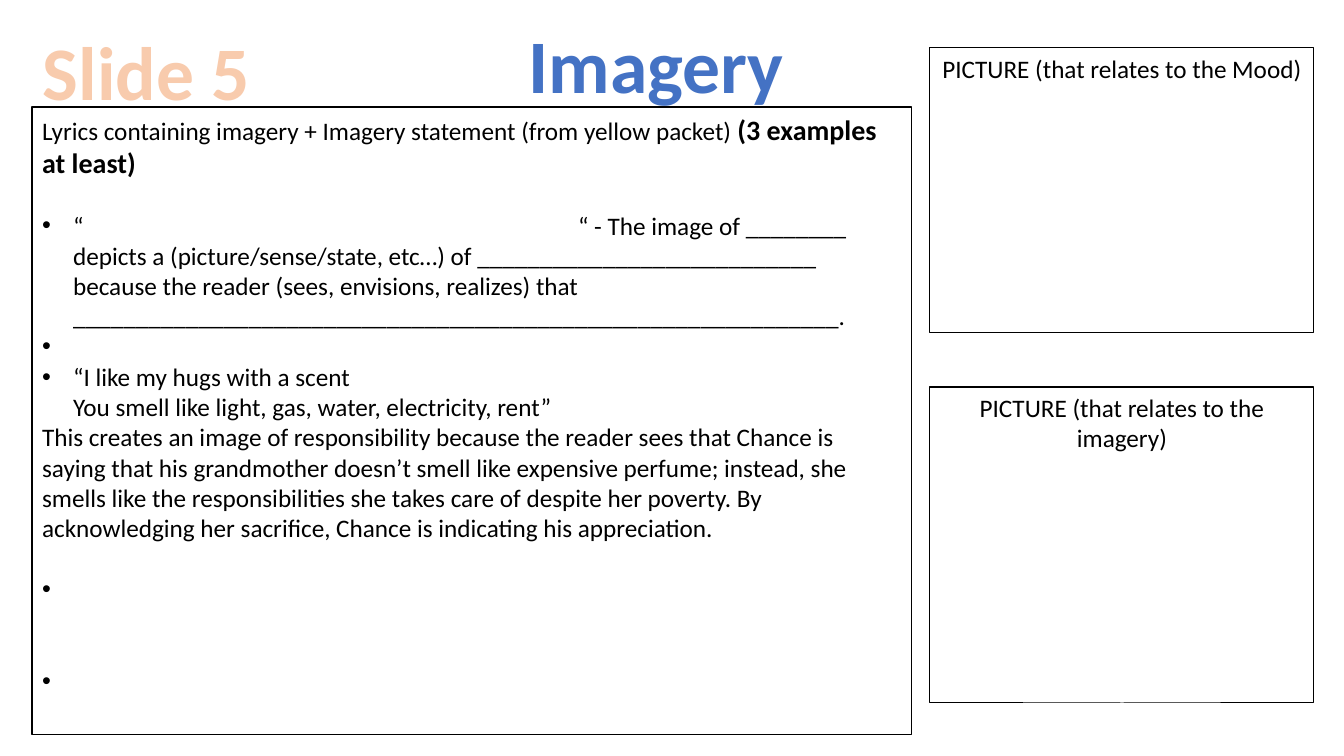
from lxml import etree
from pptx import Presentation
from pptx.dml.color import RGBColor
from pptx.enum.shapes import MSO_SHAPE
from pptx.enum.text import MSO_ANCHOR, MSO_AUTO_SIZE, PP_ALIGN
from pptx.oxml.ns import qn
from pptx.util import Pt

RECT = MSO_SHAPE.RECTANGLE
TOP = MSO_ANCHOR.TOP
FIXED = MSO_AUTO_SIZE.NONE
LEFT, CENTER = PP_ALIGN.LEFT, PP_ALIGN.CENTER

BLACK = RGBColor(0x00, 0x00, 0x00)
WHITE = RGBColor(0xFF, 0xFF, 0xFF)
PEACH = RGBColor(0xF8, 0xCB, 0xAD)
ORANGE = RGBColor(0xED, 0x7D, 0x31)
BLUE = RGBColor(0x44, 0x72, 0xC4)

SCALE = 914400 / 100.8
LINE = 22  # height in points of one line of 18 pt text
INDENT = 31
TAB = 536

PLAIN = {"name": "Calibri", "size": Pt(18), "bold": False}
STRONG = {**PLAIN, "size": Pt(20), "bold": True}
HEAD = {**PLAIN, "size": Pt(54), "bold": True}

QUOTE = (
    "“\t“ - The image of ________ depicts a (picture/sense/state, etc…) of "
    + "_" * 27
    + " because the reader (sees, envisions, realizes) that "
    + "_" * 61
    + "."
)
LYRICS = "“I like my hugs with a scent\vYou smell like light, gas, water, electricity, rent”"
MEANING = (
    "This creates an image of responsibility because the reader sees that "
    "Chance is saying that his grandmother doesn’t smell like expensive "
    "perfume; instead, she smells like the responsibilities she takes care of "
    "despite her poverty. By acknowledging her sacrifice, Chance is indicating "
    "his appreciation."
)
INTRO = "Lyrics containing imagery + Imagery statement (from yellow packet) "

# text, bulleted, blank lines above
POINTS = [
    (QUOTE, True, 1),
    (" ", True, 0),
    (LYRICS, True, 0),
    (MEANING, False, 0),
    (" ", True, 1),
    (" ", True, 2),
]
PHOTOS = [
    ("PICTURE (that relates to the imagery)", 387, 316),
    ("PICTURE (that relates to the Mood)", 48, 285),
]


def px(value):
    return round(value * SCALE)


class Page:
    def __init__(self, deck):
        self.slide = deck.slides.add_slide(deck.slide_layouts[1])
        self.shapes = self.slide.shapes

    def place(self, shape, *spot):
        for name, value in zip(("left", "top", "width", "height"), spot):
            setattr(shape, name, px(value))

    def frame(self, shape, wrap=True):
        """Pin the text to the top of a shape at a fixed size."""
        look = {"word_wrap": wrap, "vertical_anchor": TOP, "auto_size": FIXED}
        for name, value in look.items():
            setattr(shape.text_frame, name, value)
        return shape.text_frame

    def style(self, run, look, color=BLACK):
        for name, value in look.items():
            setattr(run.font, name, value)
        run.font.color.rgb = color

    def border(self, shape):
        shape.line.color.rgb = BLACK
        shape.line.width = Pt(0.75)

    def head(self, shape, text, spot, color, edge, width):
        """Large heading with outlined letters."""
        self.place(shape, *spot)
        para = self.frame(shape, wrap=False).paragraphs[0]
        para.text, para.alignment = text, CENTER
        run = para.runs[0]
        self.style(run, HEAD, color)
        line = etree.Element(qn("a:ln"), w=str(Pt(width)))
        fill = etree.SubElement(line, qn("a:solidFill"))
        etree.SubElement(fill, qn("a:srgbClr"), val=str(edge))
        run.font._element.insert(0, line)

    def para(self, para, text, mark=False, gap=0):
        para.text = text
        look = {"alignment": LEFT, "space_before": Pt(gap * LINE), "space_after": Pt(0)}
        for name, value in look.items():
            setattr(para, name, value)
        for run in para.runs:
            self.style(run, PLAIN)
        for brk in para._p.findall(qn("a:br")):
            etree.SubElement(brk, qn("a:rPr"), sz="1800")
        props = para._p.get_or_add_pPr()
        side = px(INDENT) if mark else 0
        props.set("marL", str(side))
        props.set("indent", str(-side))
        if mark:
            etree.SubElement(props, qn("a:buFont"), typeface="Arial")
            etree.SubElement(props, qn("a:buChar"), char="•")
        else:
            etree.SubElement(props, qn("a:buNone"))
        if "\t" in text:
            tabs = etree.SubElement(props, qn("a:tabLst"))
            etree.SubElement(tabs, qn("a:tab"), pos=str(px(TAB)), algn="l")

    def body(self, *spot):
        shape = self.slide.placeholders[1]
        self.place(shape, *spot)
        self.border(shape)
        text = self.frame(shape)
        first = text.paragraphs[0]
        self.para(first, INTRO)
        run = first.add_run()
        run.text = "(3 examples at least)"
        self.style(run, STRONG)
        for point in POINTS:
            self.para(text.add_paragraph(), *point)

    def photo(self, label, top, height):
        """Empty frame with a label along its top."""
        shape = self.shapes.add_shape(RECT, px(930), px(top), px(384), px(height))
        shape.shadow.inherit = False
        shape.fill.background()
        self.border(shape)
        para = self.frame(shape).paragraphs[0]
        para.text, para.alignment = label, CENTER
        self.style(para.runs[0], PLAIN)


def main():
    deck = Presentation()
    deck.slide_width, deck.slide_height = px(1344), px(756)
    page = Page(deck)
    page.head(page.shapes.title, "Imagery", (517, 13, 278, 102), BLUE, WHITE, 0.75)
    page.body(32, 107, 880, 628)
    label = page.shapes.add_textbox(0, 0, 0, 0)
    page.head(label, "Slide 5", (32, 20, 229, 102), PEACH, ORANGE, 1.75)
    for photo in PHOTOS:
        page.photo(*photo)
    deck.save("out.pptx")


if __name__ == "__main__":
    main()
